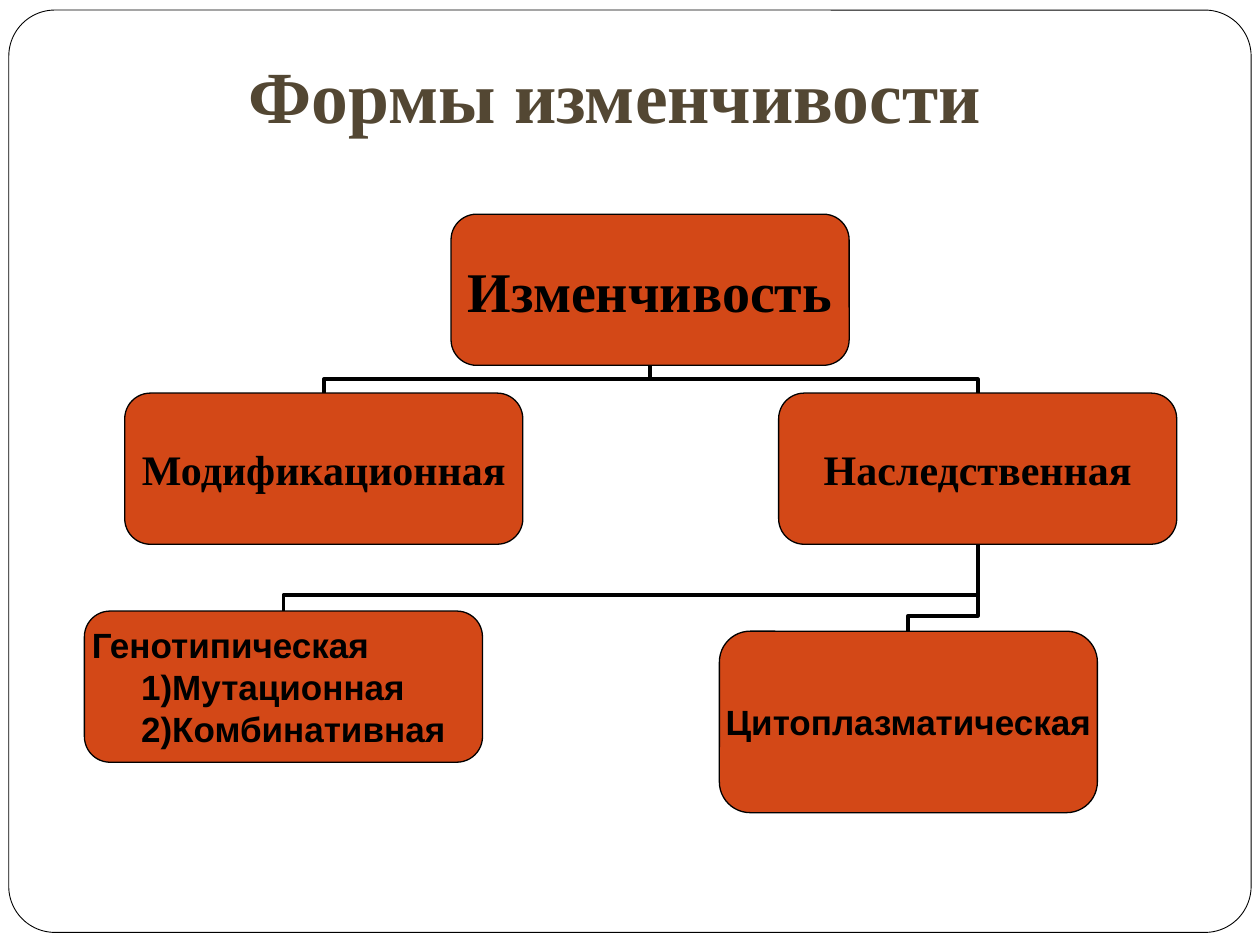
from dataclasses import dataclass

import pptx
import pptx.dml.color
import pptx.enum.shapes
import pptx.enum.text
import pptx.oxml
import pptx.oxml.ns
import pptx.util
from lxml import etree

ALIGN = pptx.enum.text.PP_ALIGN
SHAPE = pptx.enum.shapes.MSO_SHAPE
UNIT = pptx.util.Inches(0.1)  # one grid cell: the slide is 100 columns by 75 rows
COLUMNS, ROWS = 100, 75


@dataclass(frozen=True)
class Theme:
    serif: str = "Times New Roman"
    sans: str = "Arial"
    paper: str = "FFFFFF"
    ink: str = "000000"
    heading: str = "534733"
    node: str = "D34817"
    title_size: int = 42
    root_size: int = 32
    branch_size: int = 24
    leaf_size: int = 20
    frame_line: float = 0.5
    node_line: float = 0.75
    link_line: float = 2.25


THEME = Theme()


def rgb(value):
    return pptx.dml.color.RGBColor.from_string(value)


def grid(*cells):
    return [round(cell * UNIT) for cell in cells]


def write(frame, text, *, size, font, color=THEME.ink, align=ALIGN.CENTER,
          inset=0, wrap=False, indent=0):
    """Fill a text frame in bold; indent applies to every line after the first."""
    frame.word_wrap = wrap
    frame.auto_size = pptx.enum.text.MSO_AUTO_SIZE.NONE
    frame.vertical_anchor = pptx.enum.text.MSO_ANCHOR.MIDDLE
    frame.margin_left = frame.margin_right = pptx.util.Inches(inset)
    frame.margin_top = frame.margin_bottom = pptx.util.Inches(inset / 2)
    frame.text = text
    for number, paragraph in enumerate(frame.paragraphs):
        paragraph.alignment = align
        if number and indent:
            margin = pptx.util.Inches(indent)
            paragraph._p.get_or_add_pPr().set("marL", str(margin))
        for run in paragraph.runs:
            run.font.size = pptx.util.Pt(size)
            run.font.name = font
            run.font.bold = True
            run.font.color.rgb = rgb(color)


def rounded_box(slide, box, fill, line_width, corner):
    shape = slide.shapes.add_shape(SHAPE.ROUNDED_RECTANGLE, *grid(*box))
    shape.adjustments[0] = corner
    shape.shadow.inherit = False
    shape.fill.solid()
    shape.fill.fore_color.rgb = rgb(fill)
    shape.line.color.rgb = rgb(THEME.ink)
    shape.line.width = pptx.util.Pt(line_width)
    return shape


def elbow_link(slide, child, parent, bend=0.5):
    """Run up from a child's top, across, and up to its parent's bottom."""
    start_x, start_y = child.left + child.width // 2, child.top
    end_x, end_y = parent.left + parent.width // 2, parent.top + parent.height
    middle_x, middle_y = (start_x + end_x) // 2, (start_y + end_y) // 2
    rise, run = start_y - end_y, abs(end_x - start_x)
    side = 1 if start_x < end_x else -1
    # The preset bends sideways, so it is laid out lying down and then turned.
    link = slide.shapes.add_connector(
        pptx.enum.shapes.MSO_CONNECTOR.ELBOW,
        middle_x - side * rise // 2, middle_y - run // 2,
        middle_x + side * rise // 2, middle_y + run // 2)
    link.line.color.rgb = rgb(THEME.ink)
    link.line.width = pptx.util.Pt(THEME.link_line)
    properties = link.element.spPr
    qn = pptx.oxml.ns.qn
    turn = 270 if side > 0 else 90
    properties.find(qn("a:xfrm")).set("rot", str(turn * 60000))
    guides = properties.find(qn("a:prstGeom")).get_or_add_avLst()
    etree.SubElement(guides, qn("a:gd"), name="adj1", fmla=f"val {round(bend * 100000)}")
    etree.SubElement(properties, qn("a:effectLst"))
    return link


def page_frame(slide, box):
    frame = rounded_box(slide, box, THEME.paper, THEME.frame_line, 0.05)
    slide.shapes.title.element.addprevious(frame.element)


def heading(slide, box, text):
    title = slide.shapes.title
    title.left, title.top, title.width, title.height = grid(*box)
    write(title.text_frame, text, size=THEME.title_size, font=THEME.serif,
          color=THEME.heading, inset=0.1, wrap=True)


def variability_tree(slide, box):
    left, top, _, _ = box

    def node(text, column, row, width=31.6, height=12, **text_format):
        place = (left + column, top + row, width, height)
        shape = rounded_box(slide, place, THEME.node, THEME.node_line, 0.17)
        write(shape.text_frame, text, **text_format)
        return shape

    branch = dict(size=THEME.branch_size, font=THEME.serif)
    leaf = dict(size=THEME.leaf_size, font=THEME.sans)
    level = 14.2
    root = node("Изменчивость", 29.1, 0, size=THEME.root_size, font=THEME.serif)
    modification = node("Модификационная", 3.2, level, **branch)
    hereditary = node("Наследственная", 55.1, level, **branch)
    genotypic = node("Генотипическая\n1)Мутационная\n2)Комбинативная", 0, 31.5,
                     align=ALIGN.LEFT, wrap=True, indent=0.39, **leaf)
    cytoplasmic = node("Цитоплазматическая", 50.4, 33.1, 30, 14.4, **leaf)

    links = [(cytoplasmic, hereditary, 0.18), (genotypic, hereditary, 0.24),
             (hereditary, root, 0.5), (modification, root, 0.5)]
    for child, parent, bend in links:
        link = elbow_link(slide, child, parent, bend)
        root.element.addprevious(link.element)


def main():
    deck = pptx.Presentation()
    deck.slide_width, deck.slide_height = grid(COLUMNS, ROWS)
    slide = deck.slides.add_slide(deck.slide_layouts.get_by_name("Title Only"))
    page_frame(slide, (0.7, 0.8, 98.6, 73.2))
    heading(slide, (7.8, 2.5, 82, 10), "Формы изменчивости")
    variability_tree(slide, (6.7, 17, 86.7, 47.5))
    deck.save("out.pptx")


if __name__ == "__main__":
    main()
